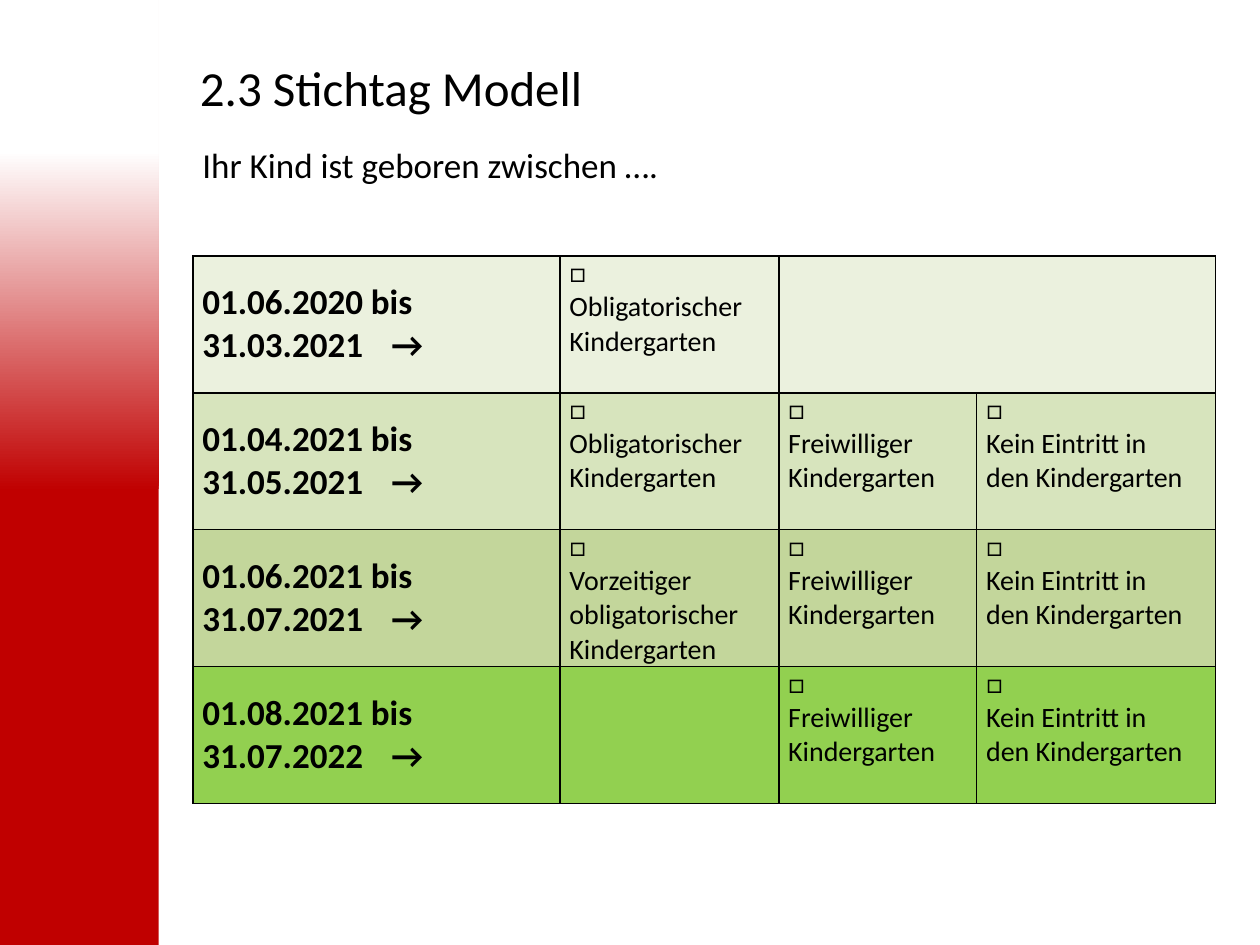
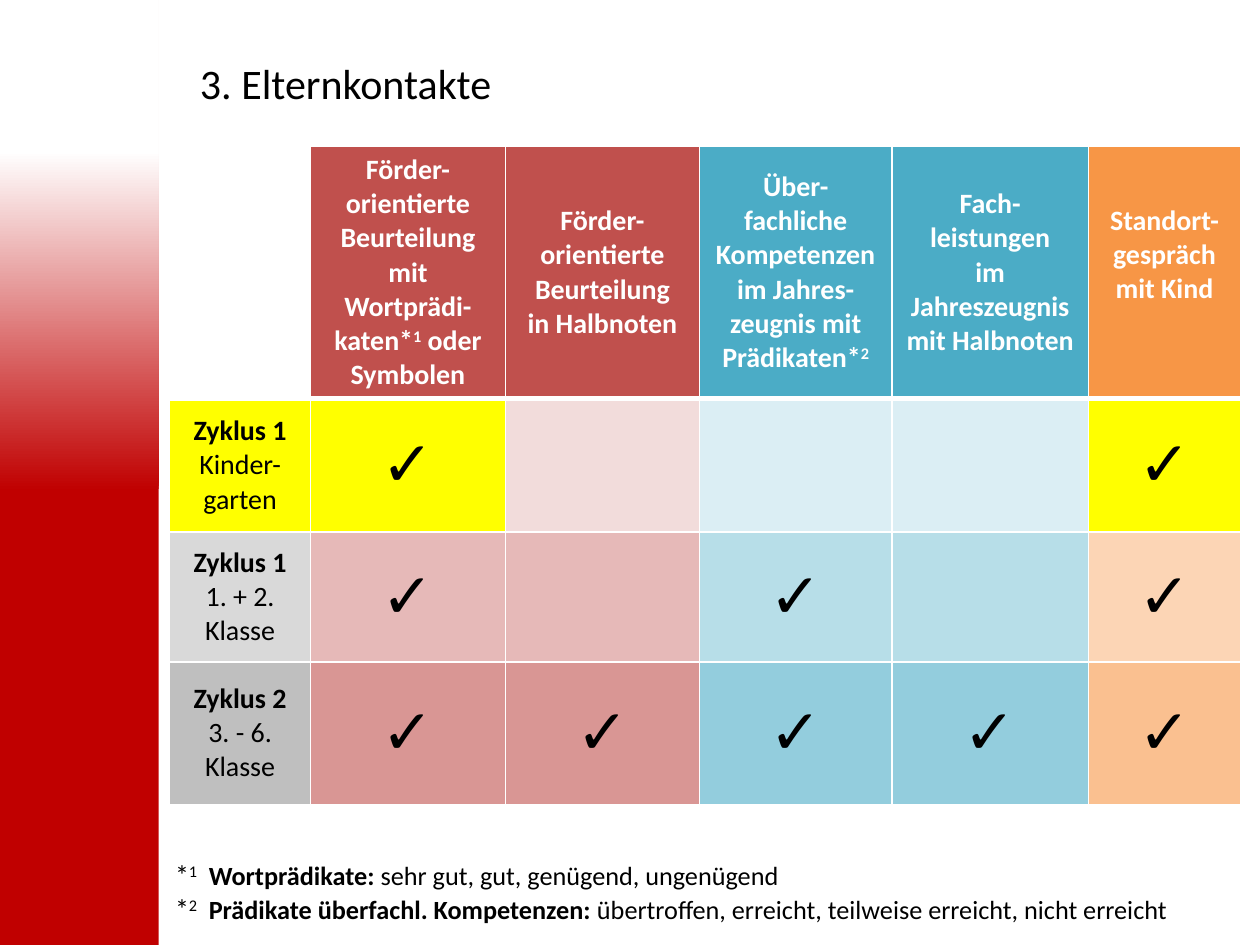
"""Build two kindergarten information slides: cut-off dates and parent contacts."""
from lxml.etree import SubElement
from pptx import Presentation
from pptx.dml.color import RGBColor
from pptx.enum.shapes import MSO_SHAPE
from pptx.enum.text import MSO_ANCHOR, PP_ALIGN
from pptx.oxml.ns import qn
from pptx.util import Cm, Pt

FONT = "Calibri"
COLORS = {
    "black": "000000", "white": "FFFFFF", "band": "C00000", "yellow": "FFFF00",
    "red": "C0504D", "red light": "F2DCDB", "red mid": "E6B9B8", "red dark": "D99694",
    "blue": "4BACC6", "blue light": "DBEEF4", "blue mid": "B7DEE8", "blue dark": "93CDDD",
    "orange": "F79646", "orange mid": "FCD5B5", "orange dark": "FAC090",
    "grey mid": "D9D9D9", "grey dark": "BFBFBF",
    "green 1": "EBF1DE", "green 2": "D7E4BD", "green 3": "C3D69B", "green 4": "92D050",
}

MANDATORY = ["□", "Obligatorischer", "Kindergarten"]
EARLY = ["□", "Vorzeitiger obligatorischer Kindergarten"]
VOLUNTARY = ["□", "Freiwilliger", "Kindergarten"]
NO_ENTRY = ["□", "Kein Eintritt in", "den Kindergarten"]
BIRTH_QUESTION = "Ihr Kind ist geboren zwischen …."
BIRTH_PERIODS = [
    ("01.06.2020 bis 31.03.2021\t→", "green 1", [MANDATORY, None, None]),
    ("01.04.2021 bis 31.05.2021\t→", "green 2", [MANDATORY, VOLUNTARY, NO_ENTRY]),
    ("01.06.2021 bis 31.07.2021\t→", "green 3", [EARLY, VOLUNTARY, NO_ENTRY]),
    ("01.08.2021 bis 31.07.2022\t→", "green 4", [None, VOLUNTARY, NO_ENTRY]),
]

ASSESSMENTS = [
    ("red", [[("Förder-orientierte Beurteilung mit Wortprädi-katen*", ""),
              ("1", "super"), (" oder Symbolen", "")]]),
    ("red", ["Förder-orientierte Beurteilung", "in Halbnoten"]),
    ("blue", [[("Über-fachliche Kompetenzen im Jahres-zeugnis mit Prädikaten*", ""),
               ("2", "super")]]),
    ("blue", ["Fach-", "leistungen", "im", "Jahreszeugnis", "mit Halbnoten"]),
    ("orange", ["Standort-", "gespräch", "mit Kind"]),
]
CYCLES = [
    ("Zyklus 1", "Kinder-garten", "✓   ✓",
     ["yellow", "yellow", "red light", "blue light", "blue light", "yellow"]),
    ("Zyklus 1", "1. + 2. Klasse", "✓ ✓ ✓",
     ["grey mid", "red mid", "red mid", "blue mid", "blue mid", "orange mid"]),
    ("Zyklus 2", "3. - 6. Klasse", "✓✓✓✓✓",
     ["grey dark", "red dark", "red dark", "blue dark", "blue dark", "orange dark"]),
]
FOOTNOTES = [
    ("1", "Wortprädikate:", "sehr gut, gut, genügend, ungenügend"),
    ("2", "Prädikate überfachl. Kompetenzen:",
     "übertroffen, erreicht, teilweise erreicht, nicht erreicht"),
]


def rgb(name):
    return RGBColor.from_string(COLORS[name])


def style(run, size, color="black", bold=False):
    run.font.name = FONT
    run.font.size = Pt(size)
    run.font.bold = bold
    run.font.color.rgb = rgb(color)


def write(frame, lines, size, color="black", bold=False, align=PP_ALIGN.LEFT):
    """Fill a frame with lines, each a string or a list of (text, mark) pairs."""
    for number, line in enumerate(lines):
        paragraph = frame.paragraphs[0] if number == 0 else frame.add_paragraph()
        paragraph.alignment = align
        for text, mark in [(line, "")] if isinstance(line, str) else line:
            run = paragraph.add_run()
            run.text = text
            style(run, size, color, bold or mark == "bold")
            if mark == "super":
                run.font._element.set("baseline", "30000")


def set_borders(cell, color, **widths):
    """Draw the cell edges L, R, T and B; a width of 0 hides an edge."""
    properties = cell._tc.get_or_add_tcPr()
    for position, edge in enumerate("LRTB"):
        width = widths.get(edge, 1)
        line = SubElement(properties, qn(f"a:ln{edge}"), w=str(Pt(width)))
        properties.insert(position, line)
        if width:
            solid = SubElement(line, qn("a:solidFill"))
            SubElement(solid, qn("a:srgbClr"), val=COLORS[color])
        else:
            SubElement(line, qn("a:noFill"))


def fill_cell(cell, color):
    cell.fill.solid()
    cell.fill.fore_color.rgb = rgb(color)


def add_grid(slide, left, top, widths, heights):
    grid = slide.shapes.add_table(len(heights), len(widths), Cm(left), Cm(top),
                                  Cm(sum(widths)), Cm(sum(heights))).table
    grid.first_row = grid.horz_banding = False
    for column, width in zip(grid.columns, widths):
        column.width = Cm(width)
    for row, height in zip(grid.rows, heights):
        row.height = Cm(height)
    return grid


def add_titled_slide(deck, heading, size):
    slide = deck.slides.add_slide(deck.slide_layouts[5])
    title = slide.shapes.title
    title.left, title.top, title.width, title.height = Cm(3.5), Cm(1.04), Cm(21.41), Cm(1.32)
    title.text_frame.text = heading
    title.text_frame.vertical_anchor = MSO_ANCHOR.TOP
    title.text_frame.margin_left = Cm(0.53)
    paragraph = title.text_frame.paragraphs[0]
    paragraph.alignment = PP_ALIGN.LEFT
    style(paragraph.runs[0], size)
    return slide


def move_band_to_layout(deck, slide):
    """Draw the red side band and place it on the shared layout."""
    band = slide.shapes.add_shape(MSO_SHAPE.RECTANGLE, 0, 0, Cm(3.2), deck.slide_height)
    band.shadow.inherit = False
    band.line.fill.background()
    band.fill.gradient()
    band.fill.gradient_angle = 90
    for stop, position, color in zip(band.fill.gradient_stops, (0.48, 0.84), ("band", "white")):
        stop.position = position
        stop.color.rgb = rgb(color)
    band._element.nvSpPr.cNvPr.id = 20
    slide.slide_layout.shapes._spTree.insert(2, band._element)


def build_cutoff_slide(deck):
    slide = add_titled_slide(deck, "2.3 Stichtag Modell", 28)
    move_band_to_layout(deck, slide)
    periods = add_grid(slide, 3.89, 2.92, [7.4, 4.41, 3.99, 4.81], [2.24] + [2.76] * 4)
    for cell in periods.iter_cells():
        cell.margin_left = cell.margin_right = Cm(0.19)
        cell.margin_top = cell.margin_bottom = 0

    for column in range(4):
        question = periods.cell(0, column)
        question.fill.background()
        set_borders(question, "black", L=0, R=0, T=0)
    periods.cell(0, 0).merge(periods.cell(0, 3))
    write(periods.cell(0, 0).text_frame, [BIRTH_QUESTION], 20)

    for row, (period, color, options) in enumerate(BIRTH_PERIODS, 1):
        for column, lines in enumerate([[period], *options]):
            cell = periods.cell(row, column)
            fill_cell(cell, color)
            set_borders(cell, "black")
            is_period = column == 0
            cell.vertical_anchor = MSO_ANCHOR.MIDDLE if is_period else MSO_ANCHOR.TOP
            write(cell.text_frame, lines or [], 20 if is_period else 16, bold=is_period)
    periods.cell(1, 2).merge(periods.cell(1, 3))


def build_contacts_slide(deck):
    slide = add_titled_slide(deck, "3. Elternkontakte", 24)
    contacts = add_grid(slide, 3.42, 2.95, [2.84, 3.93, 3.91, 3.88, 3.96, 3.07],
                        [5.07, 2.69, 2.62, 2.87])
    for column, (color, lines) in enumerate([("white", []), *ASSESSMENTS]):
        cell = contacts.cell(0, column)
        fill_cell(cell, color)
        set_borders(cell, "white", B=3)
        cell.vertical_anchor = MSO_ANCHOR.MIDDLE
        write(cell.text_frame, lines, 16, "white", True, PP_ALIGN.CENTER)
    contacts.cell(0, len(ASSESSMENTS)).margin_bottom = Cm(0.83)

    for row, (cycle, classes, checks, colors) in enumerate(CYCLES, 1):
        for column, color in enumerate(colors):
            cell = contacts.cell(row, column)
            fill_cell(cell, color)
            set_borders(cell, "white", T=3 if row == 1 else 1)
            cell.vertical_anchor = MSO_ANCHOR.MIDDLE
            if column == 0:
                write(cell.text_frame, [[(cycle, "bold")], classes], 16, align=PP_ALIGN.CENTER)
            elif checks[column - 1] == "✓":
                write(cell.text_frame, ["✓"], 36, bold=True, align=PP_ALIGN.CENTER)

    notes = slide.shapes.add_textbox(Cm(3.28), Cm(17.17), Cm(21.59), Cm(1.85)).text_frame
    notes.word_wrap = True
    write(notes, [[("*", ""), (mark, "super"), ("\t", ""), (term + " ", "bold"), (grades, "")]
                  for mark, term, grades in FOOTNOTES], 15)
    for paragraph in notes.paragraphs:
        tabs = SubElement(paragraph._p.get_or_add_pPr(), qn("a:tabLst"))
        SubElement(tabs, qn("a:tab"), pos=str(Cm(0.68)), algn="l")
        for run in paragraph.runs[:2]:
            run.font.size = Pt(16)


def main():
    deck = Presentation()
    deck.slide_width, deck.slide_height = Cm(25.4), Cm(19.05)
    build_cutoff_slide(deck)
    build_contacts_slide(deck)
    deck.save("out.pptx")


if __name__ == "__main__":
    main()
